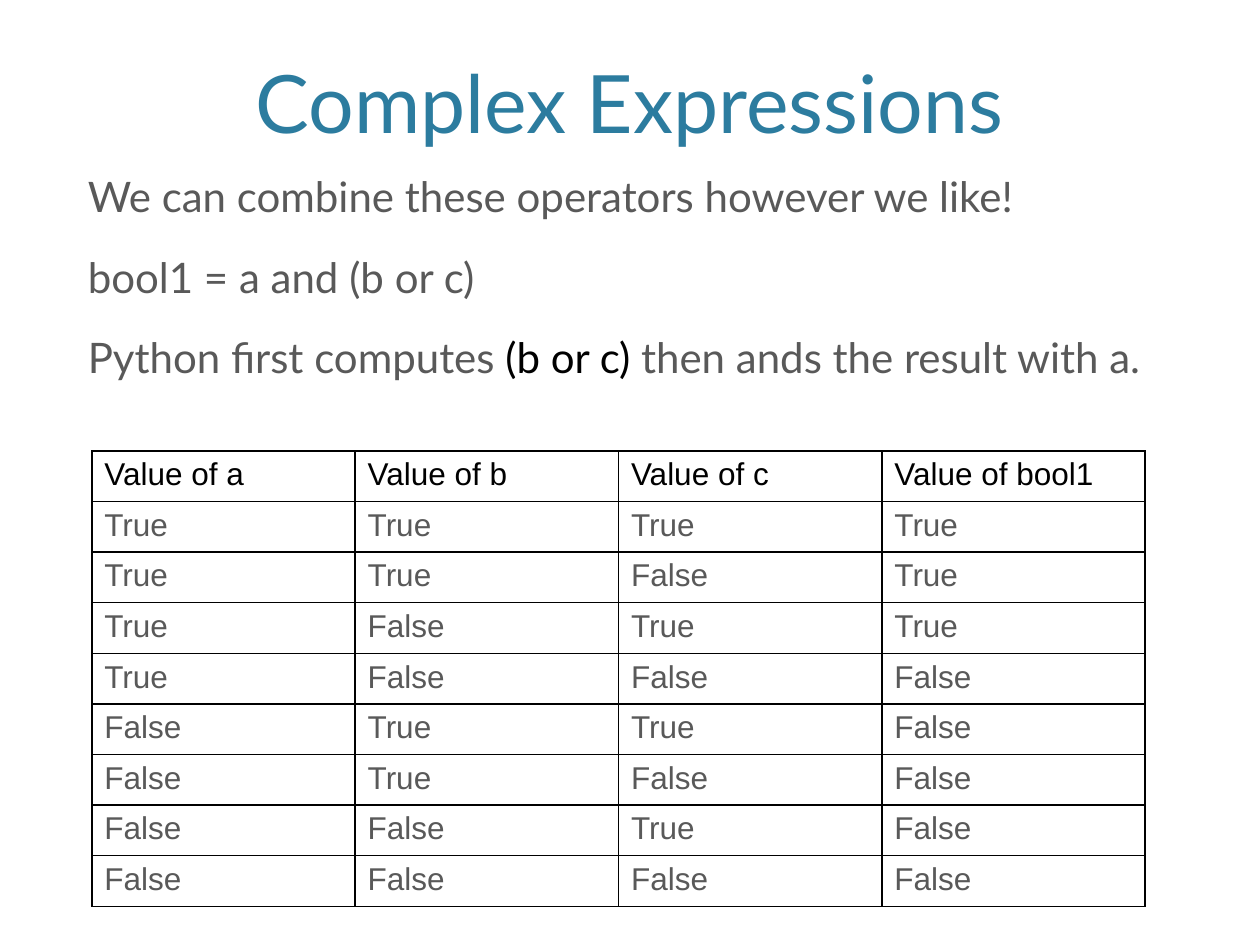
from itertools import product

from lxml.etree import SubElement
from pptx import Presentation
from pptx.dml.color import RGBColor
from pptx.enum.text import MSO_ANCHOR, PP_ALIGN
from pptx.oxml.ns import qn
from pptx.util import Cm, Pt

BLUE = RGBColor(0x2C, 0x7C, 0x9F)
GRAY = RGBColor(0x59, 0x59, 0x59)
BLACK = RGBColor(0, 0, 0)

HEADERS = ["Value of a", "Value of b", "Value of c", "Value of bool1"]
STATEMENTS = [
    [("We can combine these operators however we like!", GRAY)],
    [("bool1 = a and (b or c)", GRAY)],
    [
        ("Python first computes ", GRAY),
        ("(b or c)", BLACK),
        (" then ands the result with a.", GRAY),
    ],
]


def set_font(font, name, size, color):
    font.name = name
    font.size = Pt(size)
    font.color.rgb = color


def add_text_frame(slide, top, height):
    text_box = slide.shapes.add_textbox(Cm(1.52), Cm(top), Cm(22.33), Cm(height))
    text_box.text_frame.word_wrap = True
    return text_box.text_frame


def add_title(slide, text):
    text_frame = add_text_frame(slide, -0.56, 3.71)
    text_frame.vertical_anchor = MSO_ANCHOR.BOTTOM
    paragraph = text_frame.paragraphs[0]
    paragraph.text = text
    paragraph.alignment = PP_ALIGN.CENTER
    set_font(paragraph.font, "Lato", 46, BLUE)


def add_statements(slide):
    text_frame = add_text_frame(slide, 3.51, 12.07)
    for index, parts in enumerate(STATEMENTS):
        paragraph = text_frame.paragraphs[0]
        if index:
            paragraph = text_frame.add_paragraph()
            paragraph.space_before = Pt(23)
        paragraph.line_spacing = 0.8
        for text, color in parts:
            run = paragraph.add_run()
            run.text = text
            set_font(run.font, "Lato", 24, color)


def add_borders(cell):
    properties = cell._tc.get_or_add_tcPr()
    for side in ("a:lnL", "a:lnR", "a:lnT", "a:lnB"):
        line = SubElement(properties, qn(side), w=str(Pt(1)))
        fill = SubElement(line, qn("a:solidFill"))
        SubElement(fill, qn("a:srgbClr"), val=str(BLACK))


def fill_cell(cell, text, color):
    add_borders(cell)
    cell.fill.background()
    paragraph = cell.text_frame.paragraphs[0]
    paragraph.text = text
    set_font(paragraph.font, "Arial", 18, color)


def add_truth_table(slide):
    rows = [HEADERS]
    for a, b, c in product([True, False], repeat=3):
        rows.append([str(value) for value in (a, b, c, a and (b or c))])
    table = slide.shapes.add_table(
        len(rows), len(HEADERS), Cm(1.85), Cm(9.09), Cm(21.24), Cm(9.18)
    ).table
    for column in table.columns:
        column.width = Cm(5.31)
    for row_index, values in enumerate(rows):
        table.rows[row_index].height = Cm(1.02)
        for column_index, value in enumerate(values):
            color = GRAY if row_index else BLACK
            fill_cell(table.cell(row_index, column_index), value, color)


def main():
    presentation = Presentation()
    presentation.slide_width = Cm(25.4)
    presentation.slide_height = Cm(19.05)
    slide = presentation.slides.add_slide(presentation.slide_layouts[6])
    add_title(slide, "Complex Expressions")
    add_statements(slide)
    add_truth_table(slide)
    presentation.save("out.pptx")


if __name__ == "__main__":
    main()
